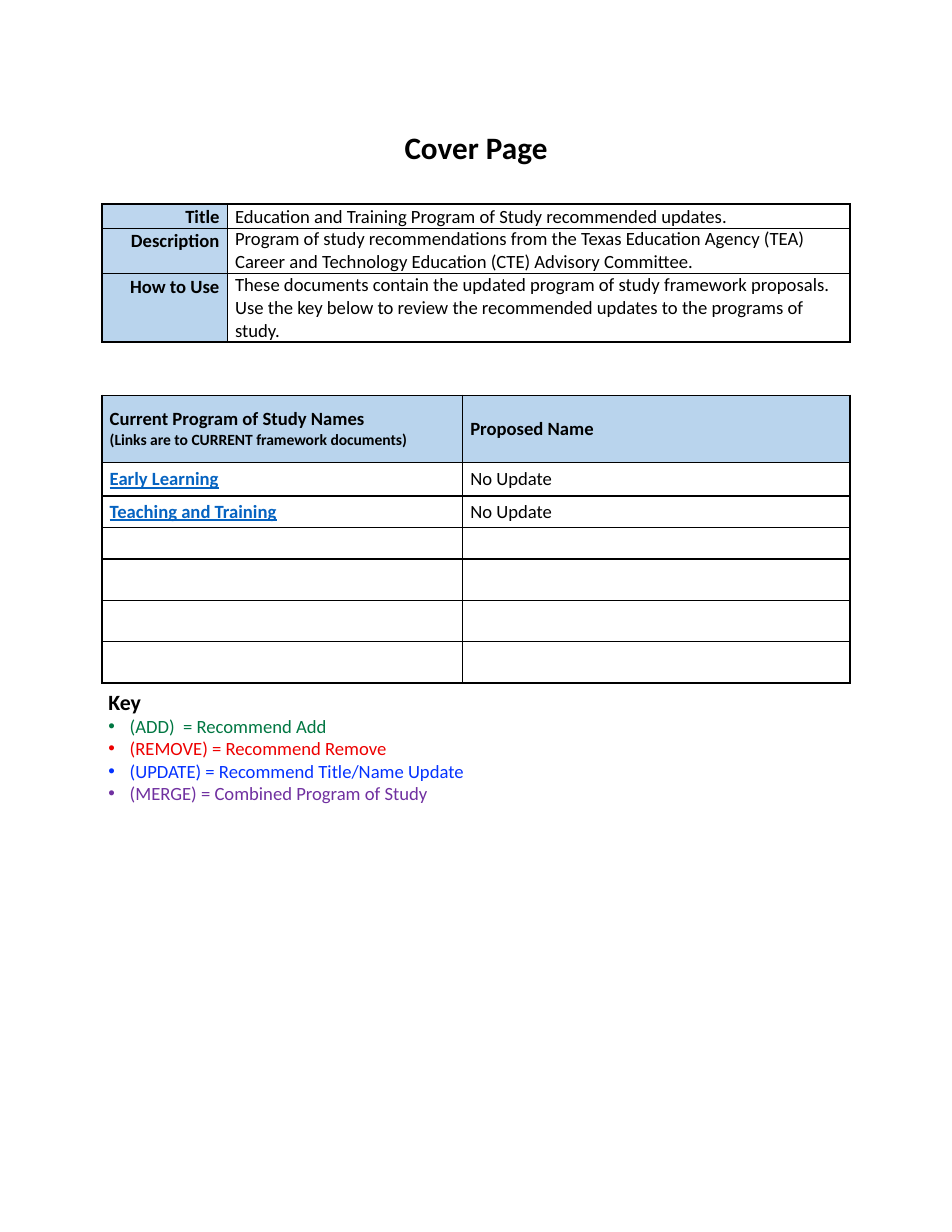
from lxml.etree import SubElement
from pptx import Presentation
from pptx.dml.color import RGBColor
from pptx.enum.text import MSO_ANCHOR, MSO_AUTO_SIZE, PP_ALIGN
from pptx.oxml.ns import qn
from pptx.util import Inches, Pt

COLORS = {
    "black": "000000", "white": "FFFFFF", "label": "BDD6EE", "header": "B9D4ED",
    "link": "0563C1", "add": "007742", "remove": "ED0000",
    "update": "0432FF", "merge": "7030A0",
}
FONT = "Calibri"
TITLE = "Cover Page"
DETAILS = [
    ("Title", "Education and Training Program of Study recommended updates.", "label"),
    ("Description", "Program of study recommendations from the Texas Education Agency (TEA) "
     "Career and Technology Education (CTE) Advisory Committee.", "label"),
    ("How to Use", "These documents contain the updated program of study framework proposals. "
     "Use the key below to review the recommended updates to the programs of study.", "header"),
]
HEADINGS = [
    ["Current Program of Study Names", "(Links are to CURRENT framework documents)"],
    ["Proposed Name"],
]
PROGRAMS = [("Early Learning", "No Update"), ("Teaching and Training", "No Update")]
PROGRAMS += [("", "")] * 4
KEY = [
    ("(ADD)  = Recommend Add", "add"),
    ("(REMOVE) = Recommend Remove", "remove"),
    ("(UPDATE) = Recommend Title/Name Update", "update"),
    ("(MERGE) = Combined Program of Study", "merge"),
]

WIDTH, HEIGHT = 8.5, 11
TABLE_LEFT = 0.91
DETAIL_COLUMNS, DETAIL_ROWS = [1.12, 5.56], [0.21, 0.4, 0.6]
PROGRAM_COLUMNS = [3.22, 3.46]
PROGRAM_ROWS = [0.6, 0.3] + [0.28] * 2 + [0.37] * 3


def style(paragraph, size=12, color="black", bold=False, underline=False):
    font = paragraph.font
    font.name, font.size, font.bold, font.underline = FONT, Pt(size), bold, underline
    font.color.rgb = RGBColor.from_string(COLORS[color])


def add_grid(slide, top, columns, rows):
    shape = slide.shapes.add_table(len(rows), len(columns), Inches(TABLE_LEFT), Inches(top),
                                   Inches(sum(columns)), Inches(sum(rows)))
    table = shape.table
    for column, width in zip(table.columns, columns):
        column.width = Inches(width)
    for row, height in zip(table.rows, rows):
        row.height = Inches(height)
    return table


def fill_cell(cell, lines, fill=None, anchor=MSO_ANCHOR.MIDDLE, **font):
    """Write the lines, border the cell on all sides and fill it, or leave it clear."""
    cell.margin_left = cell.margin_right = Inches(0.07)
    cell.margin_top = cell.margin_bottom = 0
    cell.vertical_anchor = anchor
    cell.text = "\n".join(lines)
    for paragraph in cell.text_frame.paragraphs:
        style(paragraph, **font)
    properties = cell._tc.get_or_add_tcPr()
    for side in ("a:lnL", "a:lnR", "a:lnT", "a:lnB"):
        line = SubElement(properties, qn(side), w=str(Pt(1)))
        solid = SubElement(line, qn("a:solidFill"))
        SubElement(solid, qn("a:srgbClr"), val=COLORS["black"])
    if fill:
        cell.fill.solid()
        cell.fill.fore_color.rgb = RGBColor.from_string(COLORS[fill])
    else:
        cell.fill.background()


def add_title(slide):
    title = slide.shapes.title
    title.left, title.top = 0, Inches(1.06)
    title.width, title.height = Inches(WIDTH), Inches(0.5)
    frame = title.text_frame
    frame.auto_size = MSO_AUTO_SIZE.NONE
    frame.vertical_anchor = MSO_ANCHOR.MIDDLE
    frame.text = TITLE
    frame.paragraphs[0].alignment = PP_ALIGN.CENTER
    style(frame.paragraphs[0], size=20, bold=True)


def add_details(slide):
    table = add_grid(slide, 1.82, DETAIL_COLUMNS, DETAIL_ROWS)
    for row, (label, text, fill) in enumerate(DETAILS):
        label_cell, text_cell = table.cell(row, 0), table.cell(row, 1)
        fill_cell(label_cell, [label], fill, MSO_ANCHOR.TOP, bold=True)
        fill_cell(text_cell, [text], anchor=MSO_ANCHOR.TOP)
        label_paragraph = label_cell.text_frame.paragraphs[0]
        label_paragraph.alignment = PP_ALIGN.RIGHT
        label_paragraph.line_spacing = 1.07
    table.cell(0, 1).text_frame.paragraphs[0].line_spacing = 1.07


def add_programs(slide):
    table = add_grid(slide, 3.53, PROGRAM_COLUMNS, PROGRAM_ROWS)
    for column, lines in enumerate(HEADINGS):
        fill_cell(table.cell(0, column), lines, "header", bold=True)
    table.cell(0, 0).text_frame.paragraphs[1].font.size = Pt(10)
    for row, (current, proposed) in enumerate(PROGRAMS, start=1):
        fill_cell(table.cell(row, 0), [current], "white", color="link", bold=True, underline=True)
        fill_cell(table.cell(row, 1), [proposed])


def add_key(slide):
    box = slide.shapes.add_textbox(Inches(0.87), Inches(6.1), Inches(5.7), Inches(1.14))
    frame = box.text_frame
    frame.word_wrap = True
    frame.text = "Key"
    style(frame.paragraphs[0], size=14, bold=True)
    indent = Inches(0.19)
    for text, color in KEY:
        paragraph = frame.add_paragraph()
        paragraph.text = text
        properties = paragraph._p.get_or_add_pPr()
        properties.set("marL", str(indent))
        properties.set("indent", str(-indent))
        SubElement(properties, qn("a:buFont"), typeface="Arial")
        SubElement(properties, qn("a:buChar"), char="•")
        style(paragraph, color=color)


def main():
    presentation = Presentation()
    presentation.slide_width, presentation.slide_height = Inches(WIDTH), Inches(HEIGHT)
    slide = presentation.slides.add_slide(presentation.slide_layouts.get_by_name("Title Only"))
    add_title(slide)
    add_details(slide)
    add_programs(slide)
    add_key(slide)
    presentation.save("out.pptx")


if __name__ == "__main__":
    main()
